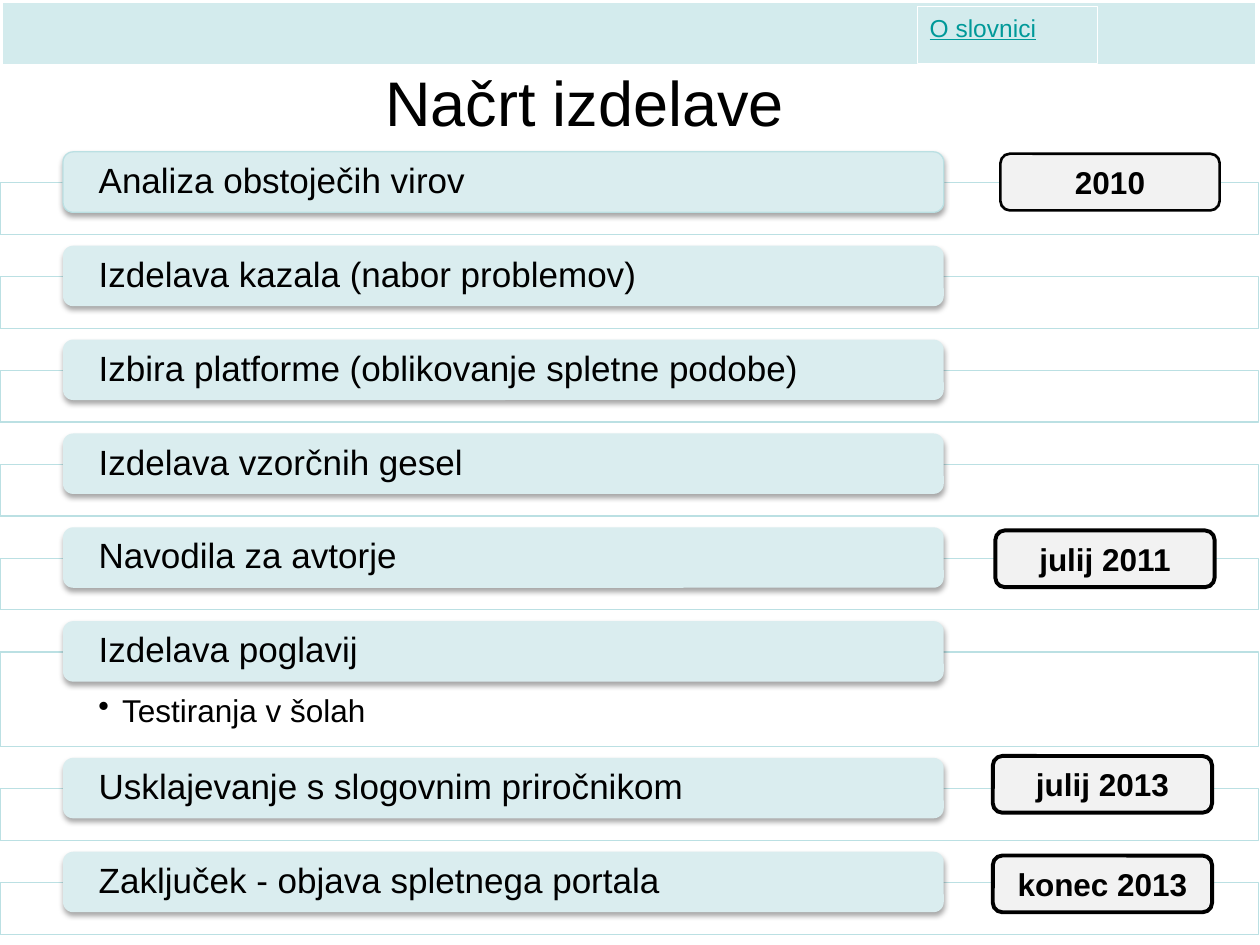
from typing import NamedTuple

from lxml import etree
from pptx import Presentation
from pptx.dml.color import RGBColor
from pptx.enum.shapes import MSO_SHAPE as Shape
from pptx.enum.text import MSO_ANCHOR as Anchor, PP_ALIGN as Align
from pptx.oxml import parse_xml
from pptx.oxml.ns import nsdecls, qn
from pptx.util import Inches, Pt

FONT = "Arial"
BLACK, WHITE = "000000", "FFFFFF"
STEP_FILL, FRAME_LINE, BAND_FILL = "DAEDEF", "BBE0E3", "D3EBED"
MILESTONE_FILL, LINK_COLOR = "F2F2F2", "009999"

FIRST_FRAME_TOP = 1.45
FRAME_GAP = 0.335
LABEL_RISE = 0.245  # how far a step label stands above its frame


class Step(NamedTuple):
    label: str
    detail: str = ""
    frame_height: float = 0.41


class Milestone(NamedTuple):
    label: str
    left: float
    top: float
    line_width: float = 2.25


STEPS = [
    Step("Analiza obstoječih virov"),
    Step("Izdelava kazala (nabor problemov)"),
    Step("Izbira platforme (oblikovanje spletne podobe)"),
    Step("Izdelava vzorčnih gesel"),
    Step("Navodila za avtorje"),
    Step("Izdelava poglavij", "Testiranja v šolah", 0.75),
    Step("Usklajevanje s slogovnim priročnikom"),
    Step("Zaključek - objava spletnega portala"),
]
MILESTONES = [
    Milestone("2010", 7.94, 1.22, 1.5),
    Milestone("julij 2011", 7.9, 4.21),
    Milestone("julij 2013", 7.88, 6),
    Milestone("konec 2013", 7.88, 6.79),
]


def rgb(color: str) -> RGBColor:
    return RGBColor.from_string(color)


def add_box(slide, kind, left: float, top: float, width: float, height: float,
            fill: str, line: str, line_width: float):
    shape = slide.shapes.add_shape(kind, Inches(left), Inches(top),
                                   Inches(width), Inches(height))
    shape.shadow.inherit = False
    shape.fill.solid()
    shape.fill.fore_color.rgb = rgb(fill)
    shape.line.color.rgb = rgb(line)
    shape.line.width = Pt(line_width)
    return shape


def set_text(shape, text: str, size: float, color: str = BLACK, align=Align.LEFT,
             anchor=Anchor.TOP, bold: bool = False, underline: bool = False):
    frame = shape.text_frame
    frame.text = text
    frame.word_wrap = True
    frame.vertical_anchor = anchor
    paragraph = frame.paragraphs[0]
    paragraph.alignment = align
    font = paragraph.runs[0].font
    font.name, font.size, font.bold = FONT, Pt(size), bold
    font.underline = underline
    font.color.rgb = rgb(color)
    return paragraph


def set_margins(shape, left: float, top: float, right: float, bottom: float) -> None:
    frame = shape.text_frame
    frame.margin_left, frame.margin_top = Inches(left), Inches(top)
    frame.margin_right, frame.margin_bottom = Inches(right), Inches(bottom)


def add_soft_shadow(shape) -> None:
    effects = shape._element.spPr.find(qn("a:effectLst"))
    effects.append(parse_xml(
        f'<a:outerShdw {nsdecls("a")} blurRad="{Pt(3.1)}" dist="{Pt(1.8)}" '
        'dir="5400000" rotWithShape="0"><a:srgbClr val="000000">'
        '<a:alpha val="35000"/></a:srgbClr></a:outerShdw>'))


def set_fill_opacity(shape, percent: int) -> None:
    color = shape._element.spPr.find(qn("a:solidFill"))[0]
    etree.SubElement(color, qn("a:alpha")).set("val", str(percent * 1000))


def add_bullet(paragraph, indent: float) -> None:
    properties = paragraph._p.get_or_add_pPr()
    properties.set("marL", str(Inches(indent)))
    properties.set("indent", str(-Inches(indent)))
    etree.SubElement(properties, qn("a:buChar")).set("char", "•")


def add_step(slide, step: Step, top: float) -> None:
    frame = add_box(slide, Shape.RECTANGLE, 0, top, 9.99, step.frame_height,
                    WHITE, FRAME_LINE, 0.75)
    set_fill_opacity(frame, 90)
    if step.detail:
        detail = set_text(frame, step.detail, 18)
        set_margins(frame, 0.78, 0.34, 0.78, 0.14)
        detail.line_spacing = 0.9
        add_bullet(detail, 0.19)

    label = add_box(slide, Shape.ROUNDED_RECTANGLE, 0.5, top - LABEL_RISE, 6.99, 0.48,
                    STEP_FILL, FRAME_LINE, 0.75)
    if step is not STEPS[0]:
        label.line.fill.background()
    add_soft_shadow(label)
    set_text(label, step.label, 20, anchor=Anchor.MIDDLE).line_spacing = 0.9
    set_margins(label, 0.26, 0, 0.26, 0)


def add_milestone(slide, milestone: Milestone) -> None:
    shape = add_box(slide, Shape.ROUNDED_RECTANGLE, milestone.left, milestone.top,
                    1.74, 0.45, MILESTONE_FILL, BLACK, milestone.line_width)
    set_text(shape, milestone.label, 18, align=Align.CENTER, anchor=Anchor.MIDDLE, bold=True)


def add_title(slide, text: str) -> None:
    title = slide.shapes.title
    title.left, title.top = Inches(0.14), Inches(0.46)
    title.width, title.height = Inches(9), Inches(0.69)
    set_text(title, text, 36, align=Align.CENTER, anchor=Anchor.MIDDLE)


def add_navigation(slide) -> None:
    add_box(slide, Shape.RECTANGLE, -0.01, -0.01, 10, 0.55, BAND_FILL, WHITE, 4.5)
    tab = add_box(slide, Shape.RECTANGLE, 7.28, 0.05, 1.43, 0.45, BAND_FILL, WHITE, 0.25)
    set_text(tab, "O slovnici", 14, LINK_COLOR, underline=True)


def main() -> None:
    presentation = Presentation()
    presentation.slide_width, presentation.slide_height = Inches(10), Inches(7.5)
    slide = presentation.slides.add_slide(presentation.slide_layouts[5])
    add_title(slide, "Načrt izdelave")
    top = FIRST_FRAME_TOP
    for step in STEPS:
        add_step(slide, step, top)
        top += step.frame_height + FRAME_GAP
    for milestone in MILESTONES:
        add_milestone(slide, milestone)
    add_navigation(slide)
    presentation.save("out.pptx")


if __name__ == "__main__":
    main()
